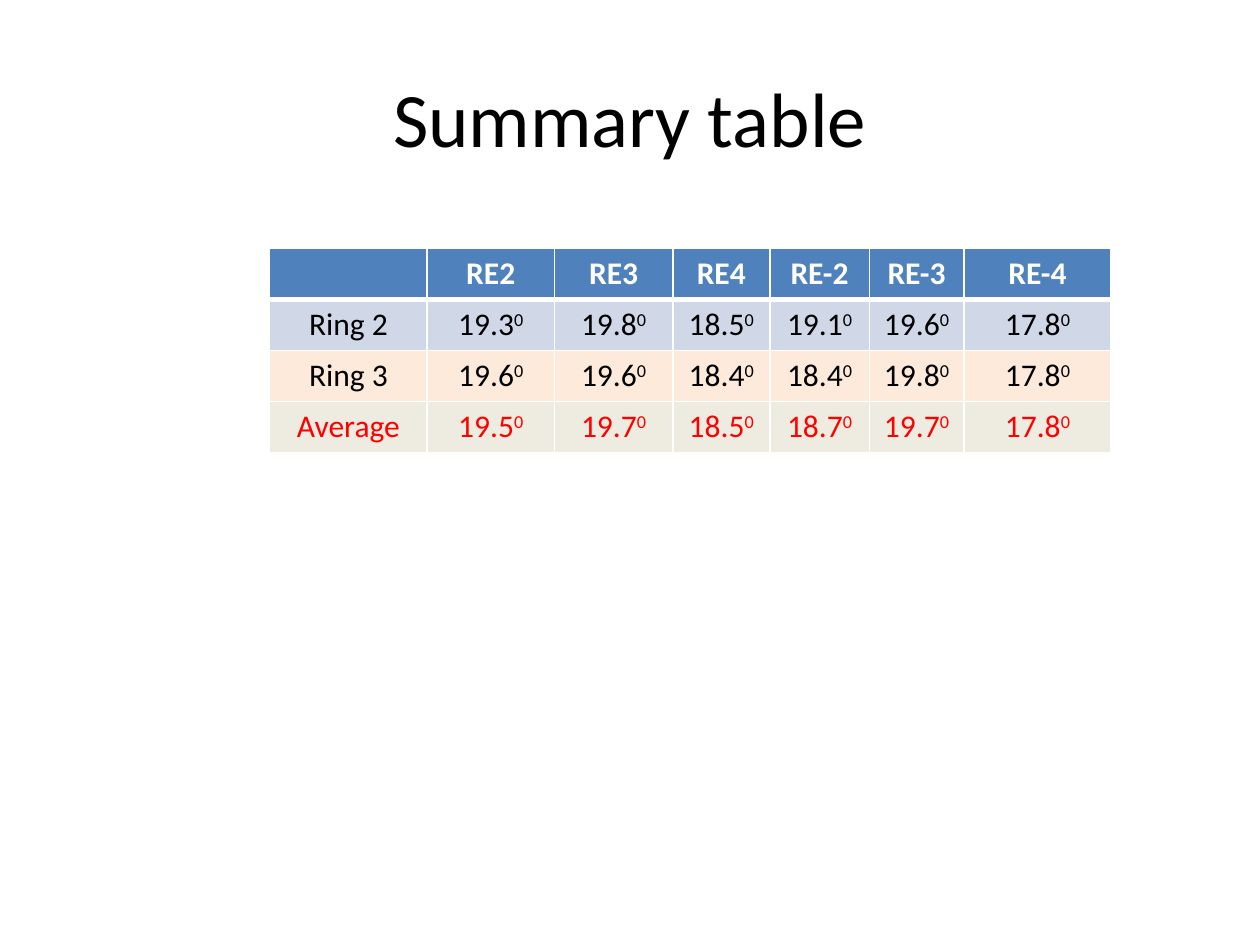
from lxml.etree import SubElement
from pptx import Presentation
from pptx.dml.color import RGBColor
from pptx.enum.text import MSO_ANCHOR as Anchor, PP_ALIGN as Align
from pptx.oxml.ns import qn
from pptx.util import Inches, Pt

FORMATS = {
    "title": {"size": Pt(44), "name": "Calibri", "bold": False},
    "header": {"size": Pt(18), "name": "Calibri", "bold": True},
    "body": {"size": Pt(18), "name": "Calibri", "bold": False},
}


def add_run(paragraph, text, style, color, raised=False):
    run = paragraph.add_run()
    run.text = text
    for attribute, value in FORMATS[style].items():
        setattr(run.font, attribute, value)
    run.font.color.rgb = RGBColor.from_string(color)
    if raised:
        run.font._element.set("baseline", "30000")


def add_border(cell, side, points, color="FFFFFF"):
    line = SubElement(cell._tc.get_or_add_tcPr(), qn(f"a:ln{side}"), w=str(Pt(points)))
    SubElement(SubElement(line, qn("a:solidFill")), qn("a:srgbClr"), val=color)


deck = Presentation()
deck.slide_width, deck.slide_height = Inches(10), Inches(7.5)
slide = deck.slides.add_slide(deck.slide_layouts[5])

title = slide.shapes.title
title.left, title.top = deck.slide_width // 20, deck.slide_height // 25
title.width, title.height = deck.slide_width * 9 // 10, deck.slide_height // 6
title.text_frame.vertical_anchor = Anchor.MIDDLE
heading = title.text_frame.paragraphs[0]
heading.alignment = Align.CENTER
add_run(heading, "Summary table", "title", "000000")

# Each row: fill, text colour, label, values
rows = [
    ("4F81BD", "FFFFFF", "", ["RE2", "RE3", "RE4", "RE-2", "RE-3", "RE-4"]),
    ("D0D8E8", "000000", "Ring 2", ["19.3", "19.8", "18.5", "19.1", "19.6", "17.8"]),
    ("FDEADA", "000000", "Ring 3", ["19.6", "19.6", "18.4", "18.4", "19.8", "17.8"]),
    ("EEECE1", "FF0000", "Average", ["19.5", "19.7", "18.5", "18.7", "19.7", "17.8"]),
]
column_widths = [1.25, 1.01, 0.94, 0.77, 0.79, 0.75, 1.17]
row_height = Inches(0.405)

summary = slide.shapes.add_table(
    len(rows), len(column_widths), Inches(2.14), Inches(1.97),
    Inches(sum(column_widths)), row_height * len(rows)).table
for column, width in zip(summary.columns, column_widths):
    column.width = Inches(width)

for row_index, (fill, color, label, values) in enumerate(rows):
    summary.rows[row_index].height = row_height
    is_header = row_index == 0
    for column_index, text in enumerate([label, *values]):
        cell = summary.cell(row_index, column_index)
        top = 3 if row_index == 1 else 1
        bottom = 3 if is_header else 1
        for side, points in {"L": 1, "R": 1, "T": top, "B": bottom}.items():
            add_border(cell, side, points)
        cell.fill.solid()
        cell.fill.fore_color.rgb = RGBColor.from_string(fill)
        paragraph = cell.text_frame.paragraphs[0]
        paragraph.alignment = Align.CENTER
        if text:
            add_run(paragraph, text, "header" if is_header else "body", color)
        if not is_header and column_index > 0:
            add_run(paragraph, "0", "body", color, raised=True)

deck.save("out.pptx")
